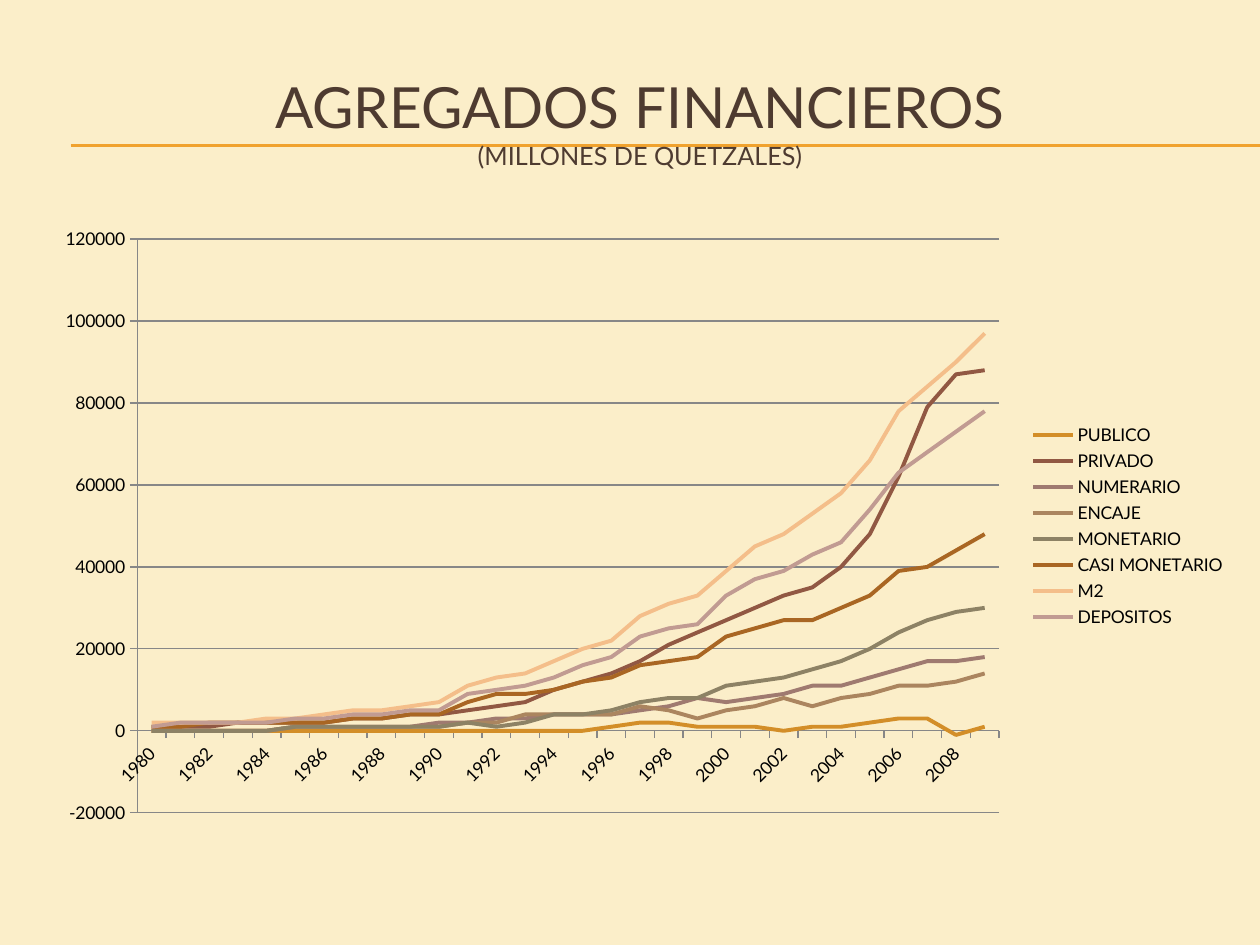
import pptx
import pptx.chart.data
import pptx.dml.color
import pptx.enum.chart
import pptx.enum.shapes
import pptx.enum.text
import pptx.oxml
import pptx.oxml.ns
import pptx.util
from dataclasses import dataclass
from lxml import etree

Inches = pptx.util.Inches
Pt = pptx.util.Pt


@dataclass(frozen=True)
class Theme:
    font: str = "Lato"
    back: str = "FBEEC9"
    rule: str = "F0A22E"
    title: str = "4E3B30"
    text: str = "000000"
    grid: str = "878787"
    big: float = 32.4
    mid: float = 14.4
    small: float = 10
    thin: float = 0.75
    thick: float = 2.25


THEME = Theme()
YEARS = range(1980, 2010)
SERIES = [
    ("PUBLICO", "D38E28", [0] * 16 + [1, 2, 2, 1, 1, 1, 0, 1, 1, 2, 3, 3, -1, 1]),
    ("PRIVADO", "915843", [1, 1, 1, 2, 2, 2, 2, 3, 3, 4, 4, 5, 6, 7, 10, 12, 14, 17, 21, 24,
                           27, 30, 33, 35, 40, 48, 62, 79, 87, 88]),
    ("NUMERARIO", "9F7A70", [0, 0, 0, 0, 0, 1, 1, 1, 1, 1, 2, 2, 3, 3, 4, 4, 4, 5, 6, 8,
                             7, 8, 9, 11, 11, 13, 15, 17, 17, 18]),
    ("ENCAJE", "AB855F", [0, 0, 0, 0, 0, 1, 1, 1, 1, 1, 1, 2, 2, 4, 4, 4, 4, 6, 5, 3,
                          5, 6, 8, 6, 8, 9, 11, 11, 12, 14]),
    ("MONETARIO", "8D8265", [0, 0, 0, 0, 0, 1, 1, 1, 1, 1, 1, 2, 1, 2, 4, 4, 5, 7, 8, 8,
                             11, 12, 13, 15, 17, 20, 24, 27, 29, 30]),
    ("CASI MONETARIO", "A96623", [1, 1, 2, 2, 2, 2, 2, 3, 3, 4, 4, 7, 9, 9, 10, 12, 13, 16, 17, 18,
                                  23, 25, 27, 27, 30, 33, 39, 40, 44, 48]),
    ("M2", "F4BE8A", [2, 2, 2, 2, 3, 3, 4, 5, 5, 6, 7, 11, 13, 14, 17, 20, 22, 28, 31, 33,
                      39, 45, 48, 53, 58, 66, 78, 84, 90, 97]),
    ("DEPOSITOS", "C19B92", [1, 2, 2, 2, 2, 3, 3, 4, 4, 5, 5, 9, 10, 11, 13, 16, 18, 23, 25, 26,
                             33, 37, 39, 43, 46, 54, 63, 68, 73, 78]),
]


def paint(line, tint, width):
    line.color.rgb = pptx.dml.color.RGBColor.from_string(tint)
    line.width = Pt(width)


def style(font, size, tint):
    font.name = THEME.font
    font.size = Pt(size)
    font.bold = False
    font.color.rgb = pptx.dml.color.RGBColor.from_string(tint)


def add_run(para, text, size):
    run = para.add_run()
    run.text = text
    style(run.font, size, THEME.title)


def add_title(slide):
    title = slide.shapes.title
    title.left, title.top = Inches(0.33), Inches(0.5)
    title.width, title.height = Inches(9.5), Inches(0.92)
    frame = title.text_frame
    frame.auto_size = pptx.enum.text.MSO_AUTO_SIZE.NONE
    frame.vertical_anchor = pptx.enum.text.MSO_ANCHOR.MIDDLE
    para = frame.paragraphs[0]
    para.alignment = pptx.enum.text.PP_ALIGN.CENTER
    add_run(para, "AGREGADOS FINANCIEROS", THEME.big)
    para.add_line_break()
    add_run(para, "(MILLONES DE QUETZALES)", THEME.mid)


def add_rule(slide, top):
    rule = slide.shapes.add_connector(
        pptx.enum.shapes.MSO_CONNECTOR.STRAIGHT,
        Inches(0.56), Inches(top), Inches(10), Inches(top))
    paint(rule.line, THEME.rule, THEME.thin)
    etree.SubElement(rule.element.spPr, pptx.oxml.ns.qn("a:effectLst"))
    slide.shapes.title.element.addprevious(rule.element)


def place_plot(chart, **box):
    space = pptx.oxml.ns.nsdecls("c")
    parts = "".join(f'<c:{key} val="{val}"/>' for key, val in box.items())
    plot = chart.element.find(".//" + pptx.oxml.ns.qn("c:plotArea"))
    for old in plot.findall(pptx.oxml.ns.qn("c:layout")):
        plot.remove(old)
    plot.insert(0, pptx.oxml.parse_xml(
        f'<c:layout {space}><c:manualLayout><c:layoutTarget val="inner"/>'
        f'<c:xMode val="edge"/><c:yMode val="edge"/>{parts}</c:manualLayout></c:layout>'))


def style_axes(chart):
    years, sums = chart.category_axis, chart.value_axis
    for axis in (years, sums):
        axis.major_tick_mark = pptx.enum.chart.XL_TICK_MARK.OUTSIDE
        axis.minor_tick_mark = pptx.enum.chart.XL_TICK_MARK.NONE
        paint(axis.format.line, THEME.grid, THEME.thin)
        style(axis.tick_labels.font, THEME.small, THEME.text)
    sums.minimum_scale, sums.maximum_scale, sums.major_unit = -20000, 120000, 20000
    sums.has_major_gridlines = True
    paint(sums.major_gridlines.format.line, THEME.grid, THEME.thin)
    sums.tick_labels.number_format = "0"
    sums.tick_labels.number_format_is_linked = False
    node = chart.element.find(".//" + pptx.oxml.ns.qn("c:catAx"))
    node.find(".//" + pptx.oxml.ns.qn("a:bodyPr")).set("rot", "-2700000")
    skip = pptx.oxml.parse_xml(f'<c:tickLblSkip {pptx.oxml.ns.nsdecls("c")} val="2"/>')
    node.find(pptx.oxml.ns.qn("c:noMultiLvlLbl")).addprevious(skip)


def add_lines(slide):
    data = pptx.chart.data.CategoryChartData()
    data.categories = [str(year) for year in YEARS]
    for name, tint, sums in SERIES:
        data.add_series(name, [1000 * val for val in sums])
    chart = slide.shapes.add_chart(
        pptx.enum.chart.XL_CHART_TYPE.LINE,
        Inches(0.33), Inches(1.7), Inches(9.5), Inches(4.95), data).chart
    style(chart.font, THEME.small, THEME.text)
    chart.has_title = False
    chart.has_legend = True
    chart.legend.position = pptx.enum.chart.XL_LEGEND_POSITION.RIGHT
    chart.legend.include_in_layout = False
    style(chart.legend.font, THEME.small, THEME.text)
    chart.plots[0].vary_by_categories = False
    for line, (name, tint, sums) in zip(chart.plots[0].series, SERIES):
        line.smooth = False
        line.marker.style = pptx.enum.chart.XL_MARKER_STYLE.NONE
        paint(line.format.line, tint, THEME.thick)
    style_axes(chart)
    place_plot(chart, x=0.08, y=0.04, w=0.72, h=0.92)


def main():
    deck = pptx.Presentation()
    deck.slide_width, deck.slide_height = Inches(10), Inches(7.5)
    slide = deck.slides.add_slide(deck.slide_layouts.get_by_name("Title Only"))
    slide.background.fill.solid()
    slide.background.fill.fore_color.rgb = pptx.dml.color.RGBColor.from_string(THEME.back)
    add_title(slide)
    for top in (1.15, 1.16):
        add_rule(slide, top)
    add_lines(slide)
    deck.save("out.pptx")


if __name__ == "__main__":
    main()
